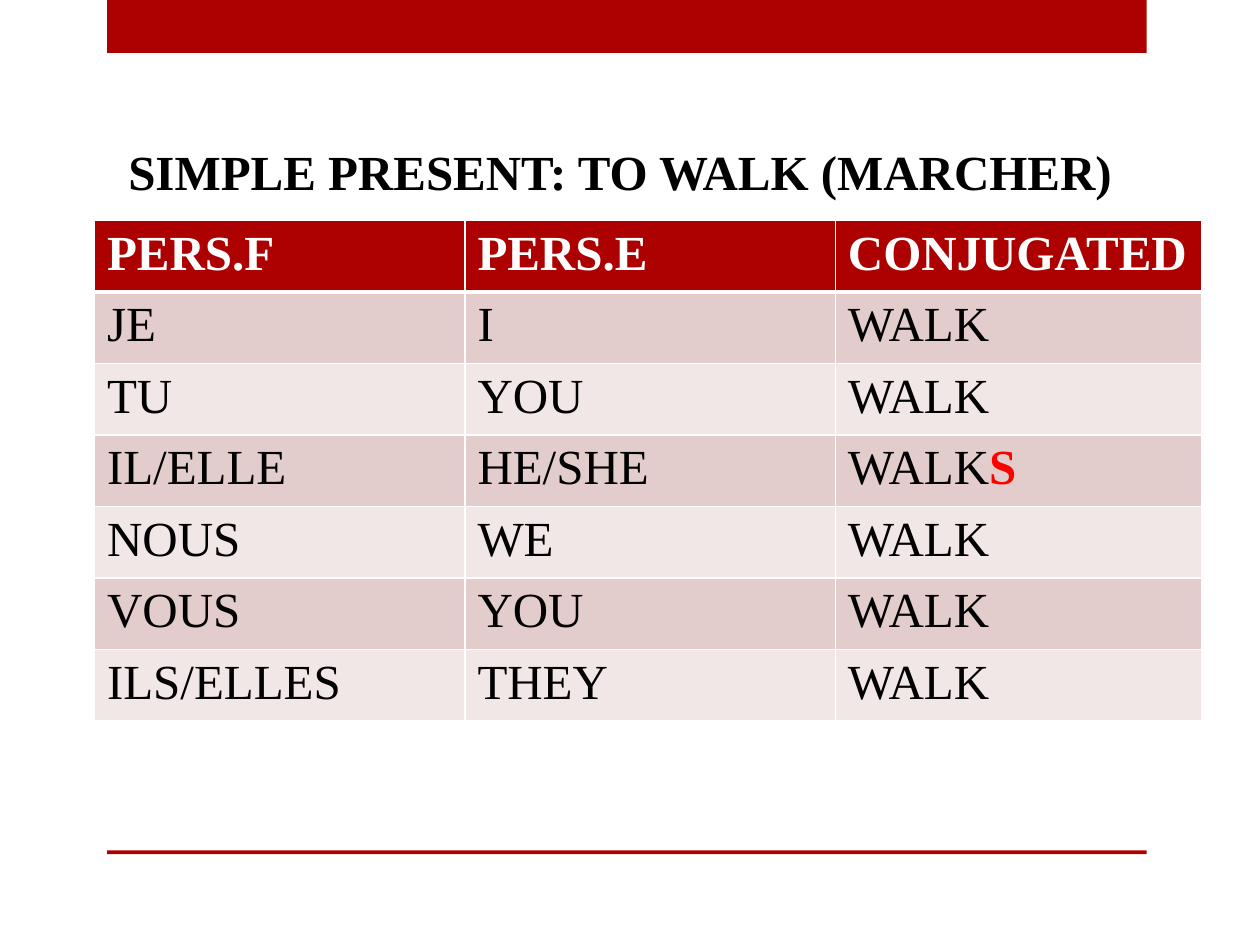
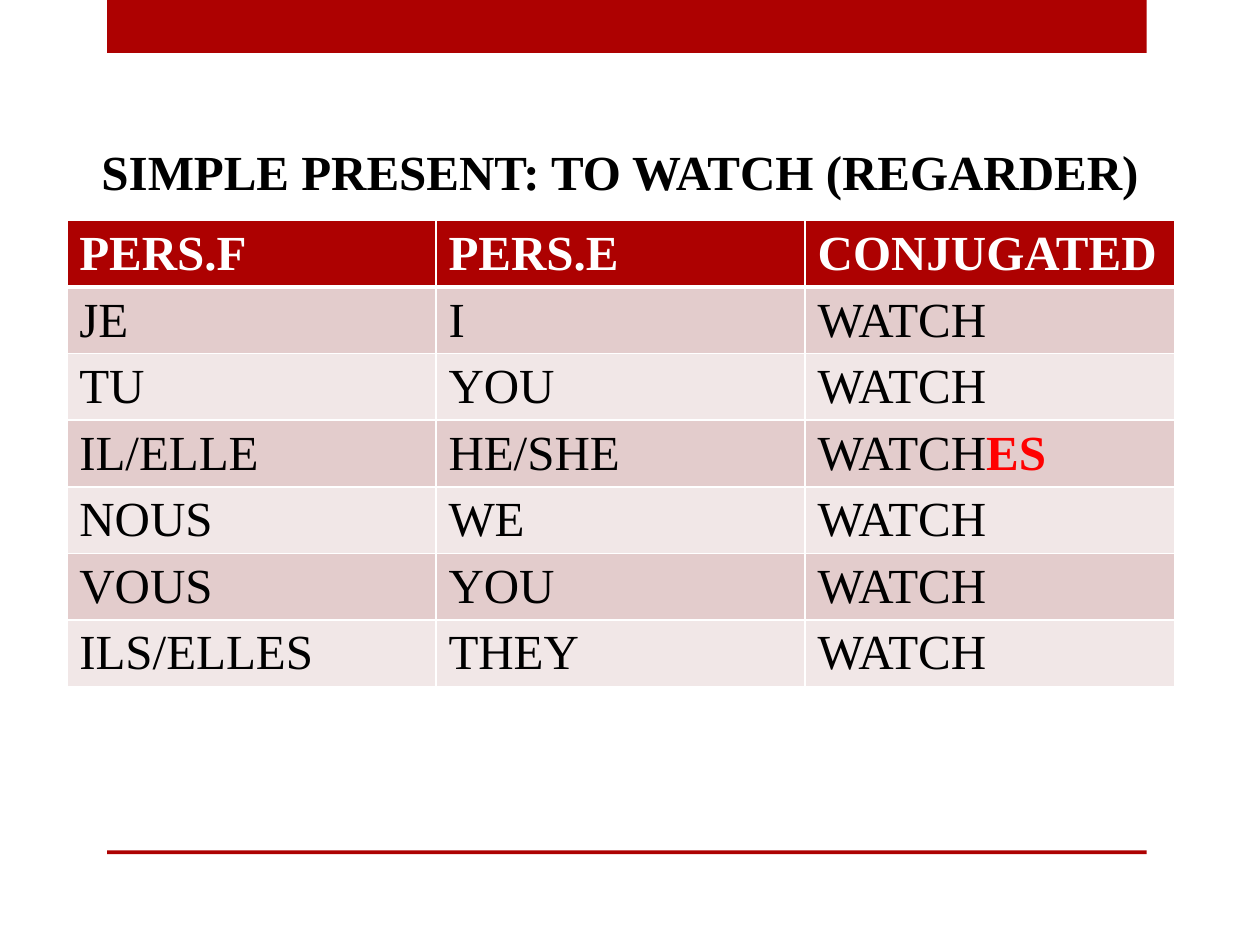
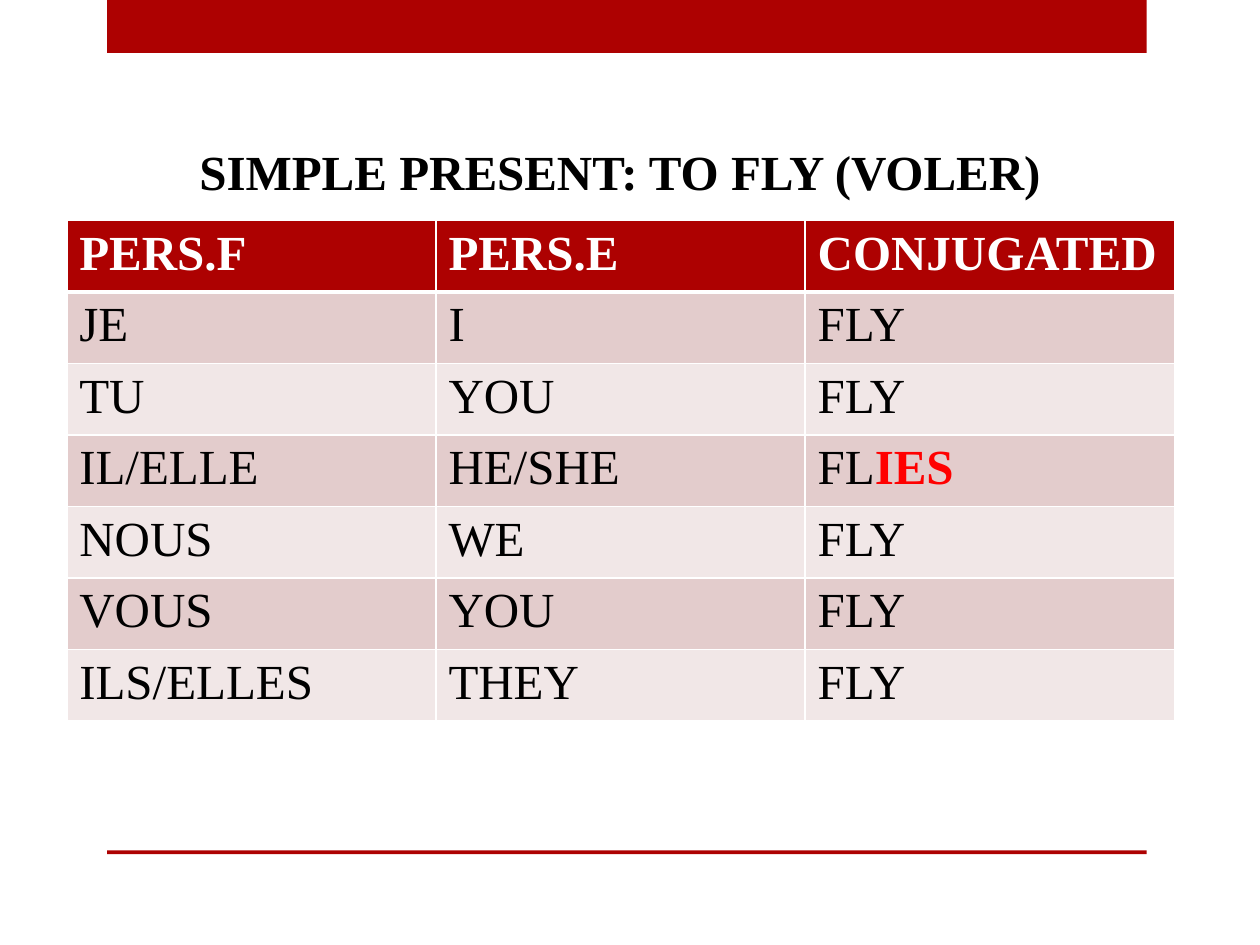
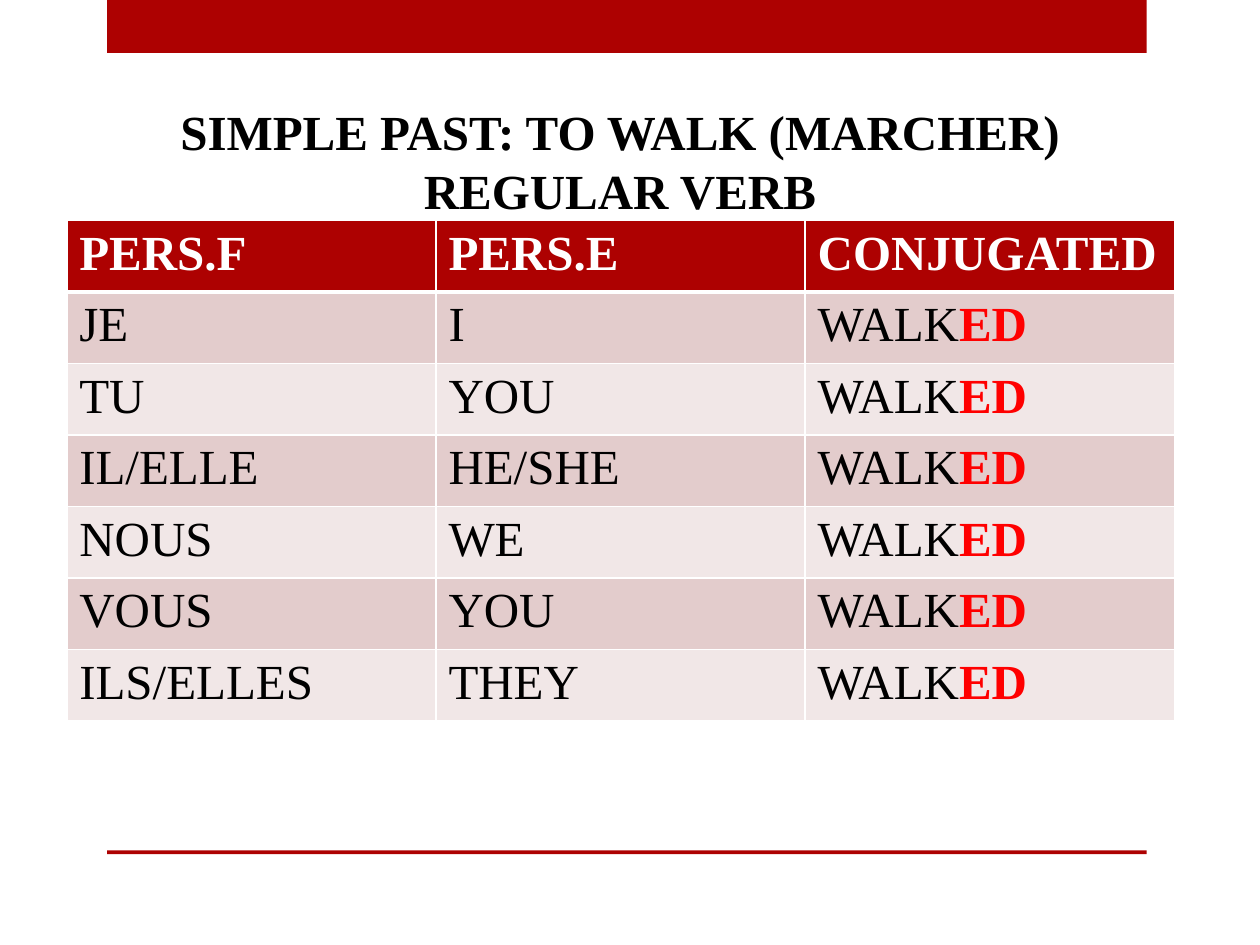
from pptx import Presentation
from pptx.dml.color import RGBColor as Rgb
from pptx.enum.shapes import MSO_SHAPE as Shape
from pptx.enum.text import PP_ALIGN as Align
from pptx.oxml.ns import qn
from pptx.util import Inches as In, Pt
from lxml.etree import SubElement as Sub

WIDE, HIGH = 10, 7.5
RED, HOT, INK, PAPER = "AD0101", "FF0000", "000000", "FFFFFF"
BANDS = ["F1E7E7", "E3CCCC"]
BARS = [(0.85, 0, 8.25, 0.42), (0.85, 6.75, 8.25, 0.03)]
HEAD = ["PERS.F", "PERS.E", "CONJUGATED"]
FRENCH = ["JE", "TU", "IL/ELLE", "NOUS", "VOUS", "ILS/ELLES"]
ENGLISH = ["I", "YOU", "HE/SHE", "WE", "YOU", "THEY"]


def present(verb, third):
    return [third if who == "HE/SHE" else (verb, "") for who in ENGLISH]


BASE = dict(top=1.07, tall=1.35, left=0.53, cols=[2.93] * 3, deep=3.97, foot=0.05)
LESSONS = [
    dict(BASE, title="SIMPLE PRESENT: TO WALK (MARCHER)",
         forms=present("WALK", ("WALK", "S")),
         left=0.75, cols=[2.94, 2.94, 2.91]),
    dict(BASE, title="SIMPLE PRESENT: TO WATCH (REGARDER)",
         forms=present("WATCH", ("WATCH", "ES")), deep=3.7, foot=0.01),
    dict(BASE, title="SIMPLE PRESENT: TO FLY (VOLER)",
         forms=present("FLY", ("FL", "IES"))),
    dict(BASE, title="SIMPLE PAST: TO WALK (MARCHER)\nREGULAR VERB",
         forms=[("WALK", "ED")] * len(ENGLISH), top=0.76, tall=1.82),
]


def tint(part, hue):
    part.rgb = Rgb.from_string(hue)


def style(run, hue, bold):
    looks = dict(name="Times New Roman", size=Pt(28), bold=bold)
    for key, value in looks.items():
        setattr(run.font, key, value)
    tint(run.font.color, hue)


def fill(part, hue):
    part.fill.solid()
    tint(part.fill.fore_color, hue)


def bars(slide):
    for box in BARS:
        bar = slide.shapes.add_shape(Shape.RECTANGLE, *map(In, box))
        bar.shadow.inherit = False
        fill(bar, RED)
        bar.line.fill.background()


def title(slide, item):
    box = slide.shapes.add_textbox(In(0.59), In(item["top"]), In(8.66), In(item["tall"]))
    box.text_frame.word_wrap = True
    para = box.text_frame.paragraphs[0]
    para.text = item["title"]
    para.alignment = Align.CENTER
    for run in para.runs:
        style(run, INK, True)


def edges(cell, row):
    props = cell._tc.get_or_add_tcPr()
    widths = dict(L=1, R=1, T=3 if row == 1 else 1, B=3 if row == 0 else 1)
    for side, width in widths.items():
        line = Sub(props, qn("a:ln" + side), w=str(Pt(width)))
        Sub(Sub(line, qn("a:solidFill")), qn("a:srgbClr"), val=PAPER)


def table(slide, item):
    rows = [[(word, "") for word in HEAD]]
    rows += [[(f, ""), (e, ""), form]
             for f, e, form in zip(FRENCH, ENGLISH, item["forms"])]
    cols, deep = item["cols"], item["deep"]
    grid = slide.shapes.add_table(len(rows), len(cols), In(item["left"]), In(1.75),
                                  In(sum(cols)), In(deep)).table
    for col, width in zip(grid.columns, cols):
        col.width = In(width)
    for r, row in enumerate(rows):
        grid.rows[r].height = In(deep / len(rows))
        for c, (stem, tail) in enumerate(row):
            cell = grid.cell(r, c)
            cell.margin_bottom = In(item["foot"])
            edges(cell, r)
            fill(cell, BANDS[r % 2] if r else RED)
            para = cell.text_frame.paragraphs[0]
            parts = [(stem, INK if r else PAPER, r == 0), (tail, HOT, True)]
            for text, hue, bold in parts:
                if text:
                    run = para.add_run()
                    run.text = text
                    style(run, hue, bold)


def main():
    deck = Presentation()
    deck.slide_width, deck.slide_height = In(WIDE), In(HIGH)
    for item in LESSONS:
        slide = deck.slides.add_slide(deck.slide_layouts[6])
        bars(slide)
        title(slide, item)
        table(slide, item)
    deck.save("out.pptx")


if __name__ == "__main__":
    main()
